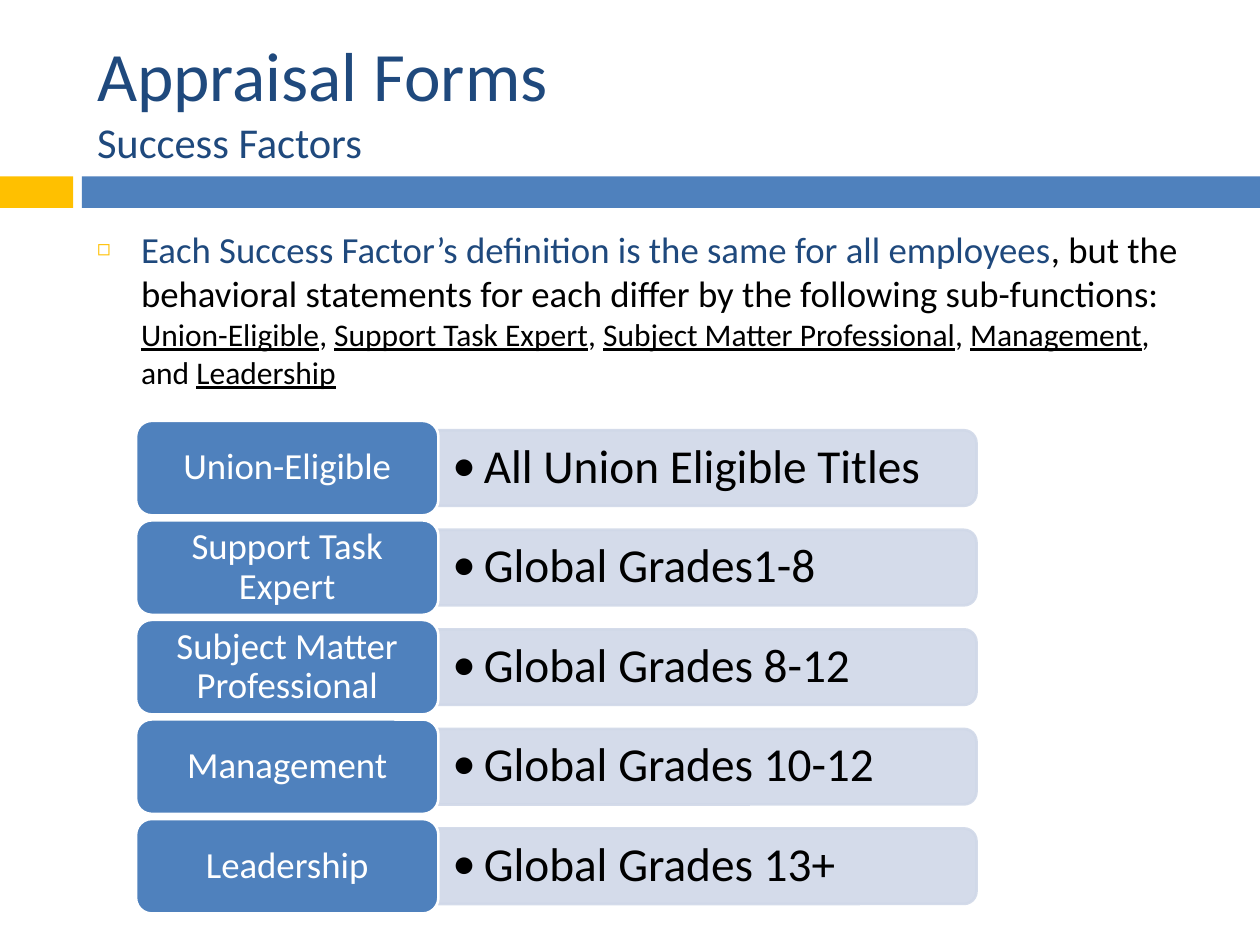
from lxml.etree import SubElement
from pptx import Presentation
from pptx.dml.color import RGBColor
from pptx.enum.shapes import MSO_SHAPE
from pptx.enum.text import MSO_ANCHOR, MSO_AUTO_SIZE, PP_ALIGN
from pptx.oxml.ns import qn
from pptx.util import Inches, Pt

FONT = "Calibri"
NAVY, BLUE, GOLD = "1F497D", "4F81BD", "FFC000"
PALE, BLACK, WHITE = "D0D8E8", "000000", "FFFFFF"

ROW_TOP, ROW_PITCH = 3.34, 0.79
LABEL_LEFT, LABEL_W, LABEL_H = 1.08, 2.4, 0.75
BAR_W, BAR_H = 4.27, 0.6
ROWS = [
    ("Union-Eligible", "All Union Eligible Titles"),
    ("Support Task Expert", "Global Grades1-8"),
    ("Subject Matter Professional", "Global Grades 8-12"),
    ("Management", "Global Grades 10-12"),
    ("Leadership", "Global Grades 13+"),
]


def rgb(value):
    return RGBColor.from_string(value)


def format_run(r, size, color, underline=None):
    r.font.name = FONT
    r.font.size = Pt(size)
    r.font.color.rgb = rgb(color)
    r.font.underline = underline


def add_bullet(p, char, indent, color=None, percent=None):
    """Give the paragraph a hanging bullet; call after its spacing is set."""
    pPr = p._p.get_or_add_pPr()
    pPr.set("marL", str(Inches(indent)))
    pPr.set("indent", str(-Inches(indent)))
    if color:
        SubElement(SubElement(pPr, qn("a:buClr")), qn("a:srgbClr"), val=color)
    if percent:
        SubElement(pPr, qn("a:buSzPct"), val=str(percent * 1000))
    SubElement(pPr, qn("a:buFont"), typeface=FONT)
    SubElement(pPr, qn("a:buChar"), char=char)


def set_frame(tf, anchor, side=0.1, edge=0.05):
    tf.word_wrap = True
    tf.auto_size = MSO_AUTO_SIZE.NONE
    tf.vertical_anchor = anchor
    tf.margin_left = tf.margin_right = Inches(side)
    tf.margin_top = tf.margin_bottom = Inches(edge)


def add_block(s, kind, left, top, width, height, fill, line=None):
    sp = s.shapes.add_shape(
        kind, Inches(left), Inches(top), Inches(width), Inches(height))
    sp.shadow.inherit = False
    sp.fill.solid()
    sp.fill.fore_color.rgb = rgb(fill)
    if line:
        sp.line.color.rgb = rgb(line)
        sp.line.width = Pt(1.5)
    else:
        sp.line.fill.background()
    return sp


def place(sp, left, top, width, height):
    sp.left, sp.top = Inches(left), Inches(top)
    sp.width, sp.height = Inches(width), Inches(height)


def add_title(s):
    sp = s.shapes.title
    place(sp, 0.67, 0.25, 8.92, 1.08)
    tf = sp.text_frame
    set_frame(tf, MSO_ANCHOR.MIDDLE)
    p = tf.paragraphs[0]
    p.text = "Appraisal Forms\vSuccess Factors"
    p.alignment = PP_ALIGN.LEFT
    for r, size in zip(p.runs, (39.6, 24.3)):
        format_run(r, size, NAVY)


def add_body(s):
    sp = s.placeholders[1]
    place(sp, 0.67, 1.75, 8.92, 4.92)
    tf = sp.text_frame
    set_frame(tf, MSO_ANCHOR.TOP)
    p = tf.paragraphs[0]
    p.space_before = Pt(7)
    add_bullet(p, "◻", 0.35, GOLD, 60)

    def add_run(text, size, color=BLACK, underline=None):
        r = p.add_run()
        r.text = text
        format_run(r, size, color, underline)

    add_run("Each Success Factor’s definition is the same for all employees",
            21, NAVY)
    add_run(", but the behavioral statements for each differ by the "
            "following sub-functions: ", 21)
    names = [label for label, _ in ROWS]
    separators = ["", ", ", ", ", ", ", ", and "]
    for separator, name in zip(separators, names):
        if separator:
            add_run(separator, 18)
        add_run(name, 18, underline=True)


def add_bar(s, top, text):
    """Draw a bar with its right-hand corners rounded, and its bulleted text."""
    left, middle = LABEL_LEFT + LABEL_W, top + LABEL_H / 2
    # The upright shape is turned a quarter about its centre.
    bar = add_block(s, MSO_SHAPE.ROUND_2_SAME_RECTANGLE,
                    left + (BAR_W - BAR_H) / 2, middle - BAR_W / 2,
                    BAR_H, BAR_W, PALE, PALE)
    bar.rotation = 90
    for color in bar._element.spPr.iter(qn("a:srgbClr")):
        SubElement(color, qn("a:alpha"), val="90000")

    box = s.shapes.add_textbox(Inches(left), Inches(middle - 0.27),
                               Inches(4.24), Inches(0.54))
    tf = box.text_frame
    set_frame(tf, MSO_ANCHOR.MIDDLE, 0.11, 0.06)
    p = tf.paragraphs[0]
    p.text = text
    p.line_spacing = 0.9
    add_bullet(p, "•", 0.25)
    format_run(p.runs[0], 27, BLACK)


def add_label(s, top, text):
    sp = add_block(s, MSO_SHAPE.ROUNDED_RECTANGLE, LABEL_LEFT, top,
                   LABEL_W, LABEL_H, BLUE, WHITE)
    tf = sp.text_frame
    set_frame(tf, MSO_ANCHOR.MIDDLE, 0.09, 0.04)
    p = tf.paragraphs[0]
    p.text = text
    p.alignment = PP_ALIGN.CENTER
    p.line_spacing = 0.9
    format_run(p.runs[0], 21, WHITE)


def main():
    prs = Presentation()
    prs.slide_width, prs.slide_height = Inches(10), Inches(7.5)
    s = prs.slides.add_slide(prs.slide_layouts[1])
    add_block(s, MSO_SHAPE.RECTANGLE, 0, 1.4, 0.58, 0.25, GOLD)
    add_block(s, MSO_SHAPE.RECTANGLE, 0.65, 1.4, 9.35, 0.25, BLUE)
    add_title(s)
    add_body(s)
    for i, (label, grades) in enumerate(ROWS):
        top = ROW_TOP + i * ROW_PITCH
        add_bar(s, top, grades)
        add_label(s, top, label)
    prs.save("out.pptx")


if __name__ == "__main__":
    main()
